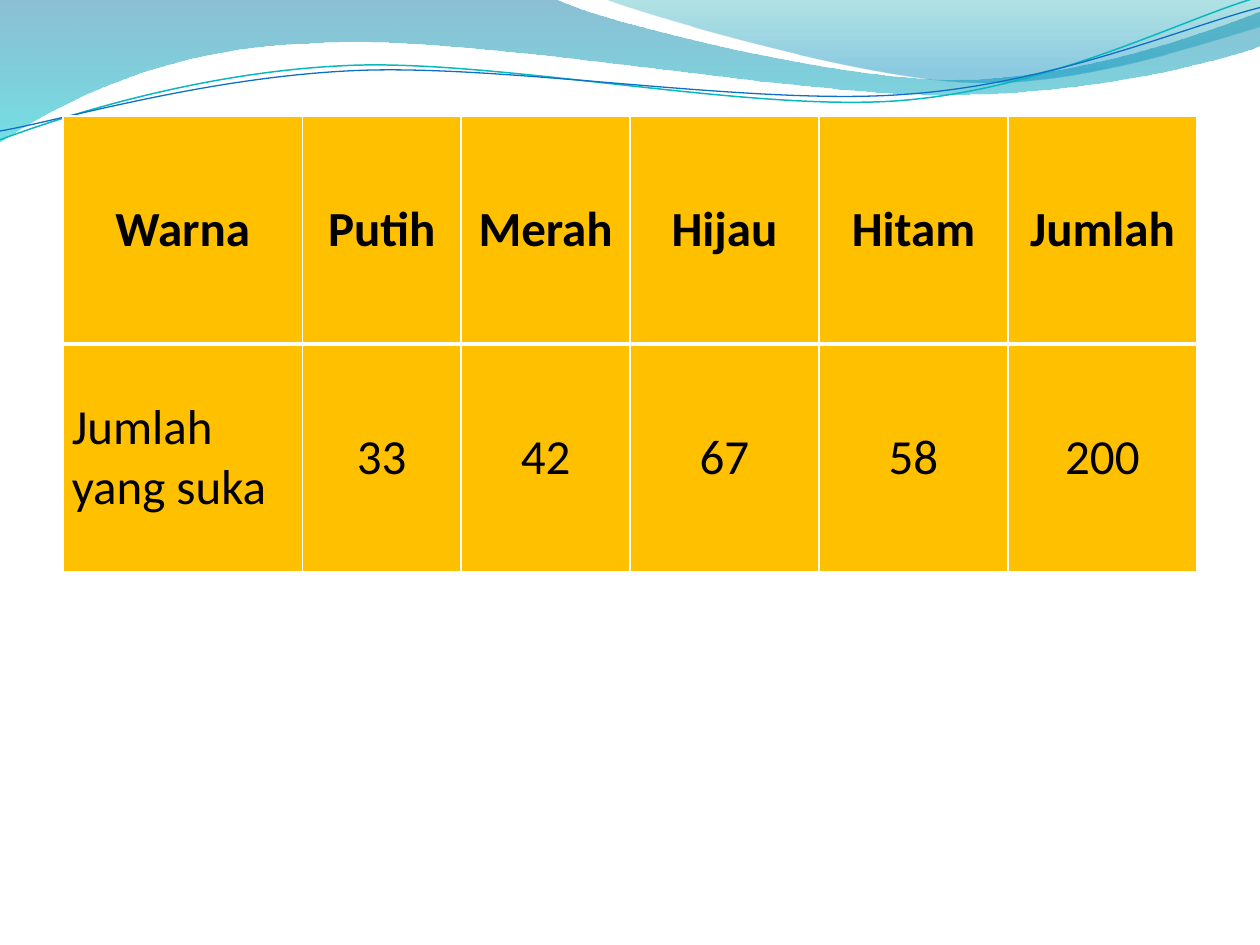
from lxml.etree import SubElement
from pptx import Presentation
from pptx.dml.color import RGBColor
from pptx.enum.text import MSO_ANCHOR, PP_ALIGN
from pptx.oxml.ns import qn
from pptx.util import Inches, Pt


def color(value):
    return RGBColor.from_string(value)


class SlideBuilder:
    font_name = "Calibri"
    font_size = Pt(28)
    text_color = "000000"
    cell_color = "FFC000"
    border_color = "FFFFFF"

    def __init__(self, deck):
        self.page = deck.slides.add_slide(deck.slide_layouts[6])

    def freeform(self, start, segments, closed):
        """Outline of segments: one point is a straight line, three are a curve."""
        corners = [(Inches(x), Inches(y)) for segment in segments for x, y in segment]
        builder = self.page.shapes.build_freeform(Inches(start[0]), Inches(start[1]))
        builder.add_line_segments(corners, close=closed)
        shape = builder.convert_to_shape()
        shape.shadow.inherit = False
        # Turn each run of three line points into one cubic curve
        steps = iter(list(shape.element.iter(qn("a:lnTo"))))
        for segment in segments:
            first, *others = [next(steps) for _ in segment]
            if others:
                curve = SubElement(first.getparent(), qn("a:cubicBezTo"))
                first.addprevious(curve)
                for step in (first, *others):
                    curve.append(step[0])
                    step.getparent().remove(step)
        return shape

    def wave(self, start, segments, stops):
        """Filled band; each stop is position, colour and opacity."""
        shape = self.freeform(start, segments, True)
        shape.line.fill.background()
        shape.fill.gradient()
        shape.fill.gradient_angle = 270
        for stop, (position, value, _) in zip(shape.fill.gradient_stops, stops):
            stop.position = position
            stop.color.rgb = color(value)
        tints = shape.element.spPr.find(qn("a:gradFill")).iter(qn("a:srgbClr"))
        for tint, (_, _, opacity) in zip(tints, stops):
            SubElement(tint, qn("a:alpha"), val=str(opacity * 1000))

    def strand(self, start, segments, value, width):
        shape = self.freeform(start, segments, False)
        shape.fill.background()
        shape.line.color.rgb = color(value)
        shape.line.width = Pt(width)

    def table(self, left, top, widths, row_height, rows):
        frame = self.page.shapes.add_table(
            len(rows), len(widths), Inches(left), Inches(top),
            Inches(sum(widths)), Inches(row_height * len(rows)))
        grid = frame.table
        for column, width in zip(grid.columns, widths):
            column.width = Inches(width)
        for row_index, texts in enumerate(rows):
            grid.rows[row_index].height = Inches(row_height)
            header = row_index == 0
            # The rule between header and body is heavier
            borders = {"L": 1, "R": 1, "T": 1 if header else 3, "B": 3 if header else 1}
            for column_index, text in enumerate(texts):
                label = not header and column_index == 0
                align = PP_ALIGN.JUSTIFY if label else PP_ALIGN.CENTER
                self.cell(grid.cell(row_index, column_index), text, header, align, borders)

    def cell(self, cell, text, bold, align, borders):
        cell.vertical_anchor = MSO_ANCHOR.MIDDLE
        cell.margin_left = cell.margin_right = Inches(0.07)
        cell.margin_top = cell.margin_bottom = 0
        properties = cell._tc.get_or_add_tcPr()
        for side, width in borders.items():
            edge = SubElement(properties, qn(f"a:ln{side}"), w=str(Pt(width)))
            paint = SubElement(edge, qn("a:solidFill"))
            SubElement(paint, qn("a:srgbClr"), val=self.border_color)
        cell.fill.solid()
        cell.fill.fore_color.rgb = color(self.cell_color)
        para = cell.text_frame.paragraphs[0]
        para.alignment = align
        para.space_before = para.space_after = Pt(6)
        span = para.add_run()
        span.text = text
        span.font.name = self.font_name
        span.font.size = self.font_size
        span.font.bold = bold
        span.font.color.rgb = color(self.text_color)


def main():
    deck = Presentation()
    deck.slide_width, deck.slide_height = Inches(10), Inches(7.5)
    slide = SlideBuilder(deck)

    # Waves across the top
    slide.wave((0, 0), [
        [(4.4, -0.01)],
        [(4.76, 0.17), (6.64, 0.63), (7.58, 0.63)],
        [(8.53, 0.63), (9.58, 0.26), (10, 0.09)],
        [(10.01, 0.36)],
        [(9.83, 0.44), (8.7, 0.76), (7.46, 0.75)],
        [(6.22, 0.75), (3.82, 0.28), (2.57, 0.34)],
        [(1.29, 0.36), (0.46, 0.83), (-0.01, 1.13)],
    ], [(0, "0074A1", 45), (1, "00C6CF", 55)])
    slide.wave((4.79, -0.01), [
        [(5.09, 0.11), (6.82, 0.62), (7.69, 0.65)],
        [(8.56, 0.69), (9.61, 0.32), (10, 0.21)],
        [(10, 0)],
    ], [(0, "00A1A9", 30), (0.8, "008BBF", 45)])

    # Thin strands below the waves
    slide.strand((0, 1.11), [
        [(0.48, 0.93), (1.58, 0.57), (2.77, 0.52)],
        [(3.95, 0.47), (5.93, 0.89), (7.13, 0.8)],
        [(8.33, 0.71), (9.38, 0.15), (9.98, -0.02)],
    ], "0AB8BF", 0.85)
    slide.strand((0, 1.04), [
        [(0.47, 0.96), (1.64, 0.61), (2.83, 0.56)],
        [(4.03, 0.51), (5.97, 0.84), (7.17, 0.75)],
        [(8.36, 0.67), (9.41, 0.21), (10, 0.06)],
    ], "0F6FC6", 0.75)

    # Favourite colour table
    slide.table(0.5, 0.92, [1.9, 1.26, 1.34, 1.5, 1.5, 1.5], 1.81, [
        ["Warna", "Putih", "Merah", "Hijau", "Hitam", "Jumlah"],
        ["Jumlah yang suka", "33", "42", "67", "58", "200"],
    ])

    deck.save("out.pptx")


if __name__ == "__main__":
    main()
